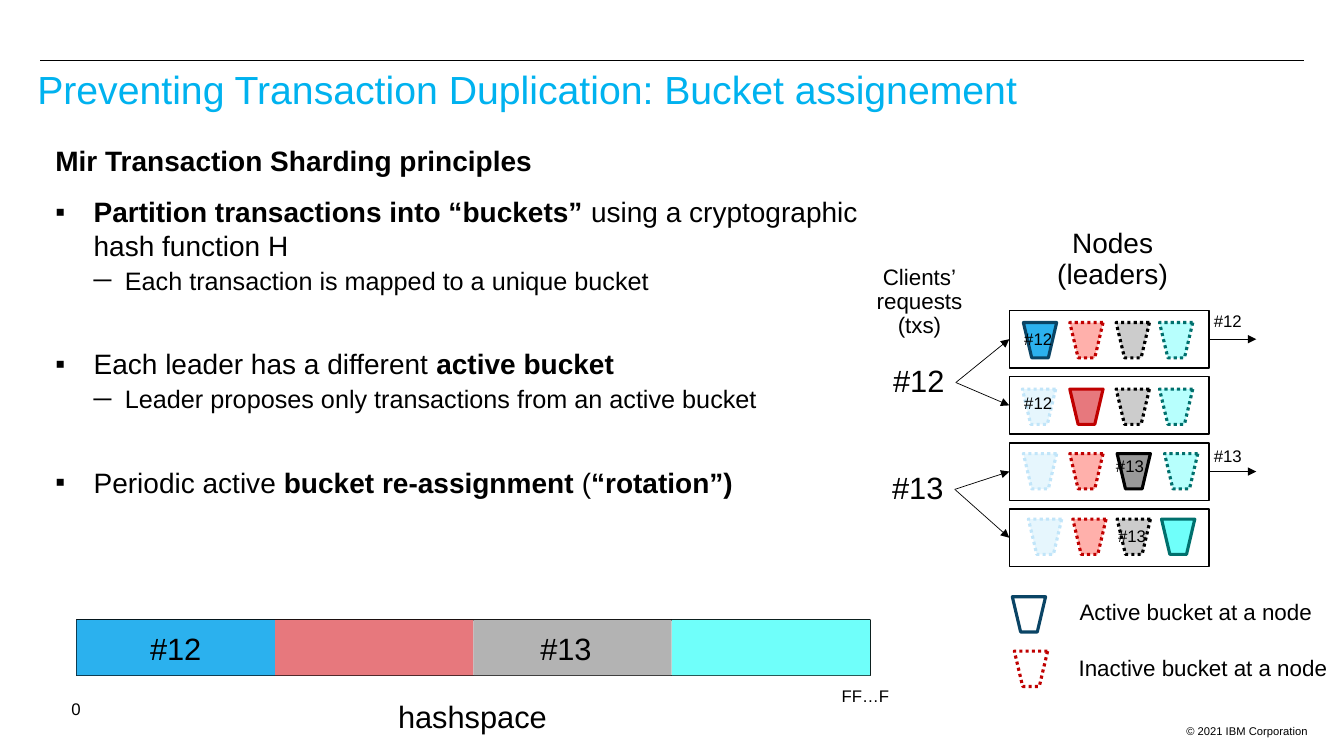
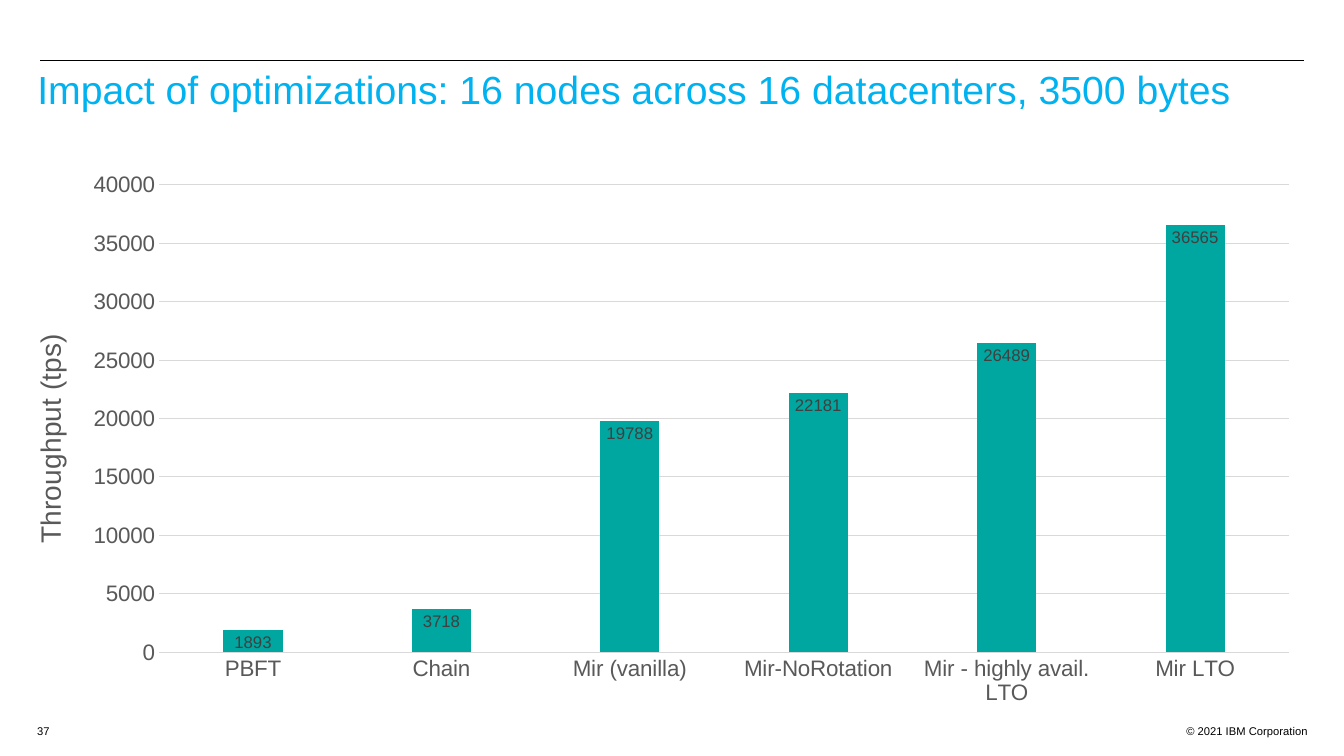
"""Build two slides on transaction sharding and throughput."""
import dataclasses
import typing

import lxml.etree
import pptx
import pptx.chart.data
import pptx.dml.color
import pptx.enum.chart
import pptx.enum.dml
import pptx.enum.shapes
import pptx.enum.text
import pptx.oxml.ns
import pptx.slide
import pptx.util

Inches = pptx.util.Inches
Pt = pptx.util.Pt
qn = pptx.oxml.ns.qn
ALIGN = pptx.enum.text.PP_ALIGN
SHAPE = pptx.enum.shapes.MSO_SHAPE

FONT = "Arial"
BLACK = "000000"
WHITE = "FFFFFF"
TITLE_BLUE = "00B2EF"
NAVY = "0A4465"
RED = "C00000"
AXIS_GREY = "595959"
GRID_GREY = "D9D9D9"
BAR_TEAL = "00A6A0"
LABEL_GREY = "404040"

LEFT_TOP, RIGHT_SIDE, LEFT_SIDE = 0.27, 3, 1
ROW_LEFT, ROW_TOP, ROW_WIDTH, ROW_HEIGHT = 10.01, 3.08, 1.98, 0.57
ROW_PITCH = 1.97 / 3
BUCKET_WIDTH, BUCKET_HEIGHT = 0.33, 0.35
HASH_LEFT, HASH_TOP, HASH_WIDTH, HASH_HEIGHT = 0.76, 6.15, 7.87, 0.55


@dataclasses.dataclass(frozen=True)
class Label:
    """A short text at a place on the slide."""

    text: str
    left: float
    top: float
    width: float
    height: float
    size: float
    align: ALIGN = ALIGN.LEFT


@dataclasses.dataclass(frozen=True)
class Point:
    """A paragraph of (text, bold) runs; level 0 has no bullet."""

    runs: tuple[tuple[str, bool], ...]
    level: int = 0
    before: float = 0


@dataclasses.dataclass(frozen=True)
class Level:
    """Size, indents and bullet of an outline level."""

    size: float
    margin: float = 0
    hanging: float = 0
    bullet: str = ""


@dataclasses.dataclass(frozen=True)
class BucketStyle:
    """Colours of a bucket in its two states."""

    active: str
    inactive: str
    active_line: str
    inactive_line: str


@dataclasses.dataclass(frozen=True)
class Node:
    """A leader's bucket places and its active bucket."""

    lefts: tuple[float, ...]
    top: float
    active: int


LEVELS = (Level(20), Level(20, 0.38, 0.38, "▪"), Level(18, 0.69, 0.31, "─"))
POINTS = (
    Point((("Mir Transaction Sharding principles", True),)),
    Point((("Partition transactions into “buckets” ", True),
           ("using a cryptographic hash function H", False)), 1, 11),
    Point((("Each transaction is mapped to a unique bucket", False),), 2),
    Point((("Each leader has a different ", False), ("active bucket", True)), 1, 35),
    Point((("Leader proposes only transactions from an active bucket", False),), 2),
    Point((("Periodic active ", False), ("bucket re-assignment ", True),
           ("(", False), ("“rotation”)", True)), 1, 35),
)
BUCKET_STYLES = (
    BucketStyle("2CB1EE", "E6F6FD", NAVY, "C1E5F9"),
    BucketStyle("E7787D", "FFB0AB", RED, RED),
    BucketStyle("999999", "CCCCCC", BLACK, BLACK),
    BucketStyle("6FFFFA", "B7FFFD", "00706D", "00706D"),
)
NODES = (
    Node((10.15, 10.61, 11.07, 11.5), 3.2, 0),
    Node((10.14, 10.61, 11.07, 11.5), 3.86, 1),
    Node((10.15, 10.61, 11.08, 11.55), 4.5, 2),
    Node((10.2, 10.64, 11.08, 11.52), 5.15, 3),
)
HASH_COLOURS = ("2BB1EE", "E7787D", "B3B3B3", "6FFFFA")
REQUESTS = (
    Label("#12", 8.76, 3.58, 0.72, 0.43, 22),
    Label("#13", 8.75, 4.64, 0.72, 0.43, 22),
)
LABELS = (
    Label("0", 0.61, 6.9, 0.29, 0.28, 12),
    Label("FF…F", 8.25, 6.78, 0.68, 0.28, 12),
    Label("#12", 1.39, 6.24, 0.72, 0.43, 22),
    Label("#13", 5.26, 6.24, 0.72, 0.43, 22),
    Label("hashspace", 3.85, 6.91, 1.7, 0.43, 22),
    Label("#12", 10.06, 3.23, 0.48, 0.28, 12),
    Label("#12", 10.06, 3.87, 0.48, 0.28, 12),
    Label("#13", 10.97, 4.49, 0.48, 0.28, 12),
    Label("#13", 10.99, 5.19, 0.48, 0.28, 12),
    Label("#13", 11.94, 4.39, 0.48, 0.28, 12),
    Label("#12", 11.94, 3.06, 0.48, 0.28, 12),
    Label("Nodes\n(leaders)", 10.38, 2.23, 1.31, 0.71, 20, ALIGN.CENTER),
    Label("Clients’\nrequests\n(txs)", 8.59, 2.59, 1.06, 0.83, 16, ALIGN.CENTER),
    Label("Active bucket at a node", 10.61, 5.92, 2.54, 0.34, 16),
    Label("Inactive bucket at a node", 10.6, 6.47, 2.7, 0.34, 16),
)
COPYRIGHT = Label("© 2021 IBM Corporation", 11.07, 7.15, 2, 0.2, 8, ALIGN.RIGHT)
PAGE_NUMBER = Label("37", LEFT_TOP, 7.15, 0.53, 0.2, 8)
THROUGHPUT = {
    "PBFT": 1893, "Chain": 3718, "Mir (vanilla)": 19788,
    "Mir-NoRotation": 22181, "Mir - highly avail. LTO": 26489, "Mir LTO": 36565,
}


def rgb(colour: str) -> pptx.dml.color.RGBColor:
    """Turn a hex string into a colour."""
    return pptx.dml.color.RGBColor.from_string(colour)


def apply(target: typing.Any, values: dict[str, typing.Any]) -> None:
    """Set each named attribute of the target."""
    for name, value in values.items():
        setattr(target, name, value)


def style_font(font: typing.Any, size: float, colour: str = BLACK, bold: bool = False) -> None:
    """Give a font its face, size, weight and colour."""
    apply(font, {"name": FONT, "size": Pt(size), "bold": bold})
    font.color.rgb = rgb(colour)


def style_line(line: typing.Any, colour: str, width: float) -> None:
    """Give a line its colour and width."""
    line.color.rgb = rgb(colour)
    line.width = Pt(width)


def add_label(slide: pptx.slide.Slide, label: Label) -> typing.Any:
    """Draw a label that does not wrap."""
    box = slide.shapes.add_textbox(*map(Inches, (label.left, label.top, label.width, label.height)))
    box.text_frame.word_wrap = False
    box.text_frame.text = label.text
    for paragraph in box.text_frame.paragraphs:
        apply(paragraph, {"alignment": label.align, "line_spacing": 0.9})
        style_font(paragraph.runs[0].font, label.size)
    return box


def add_line(slide: pptx.slide.Slide, start: tuple[float, float], end: tuple[float, float],
             width: float, arrow: bool = False) -> typing.Any:
    """Draw a straight black line, with an arrowhead if asked."""
    line = slide.shapes.add_connector(
        pptx.enum.shapes.MSO_CONNECTOR.STRAIGHT, *map(Inches, start + end))
    style_line(line.line, BLACK, width)
    if arrow:
        lxml.etree.SubElement(line.line._get_or_add_ln(), qn("a:tailEnd"), type="triangle")
    lxml.etree.SubElement(line._element.spPr, qn("a:effectLst"))
    return line


def add_block(slide: pptx.slide.Slide, kind: SHAPE, place: tuple[float, ...],
              fill: str = "", outline: str = "", width: float = 1) -> typing.Any:
    """Draw a preset shape; an empty colour means none."""
    block = slide.shapes.add_shape(kind, *map(Inches, place))
    block.shadow.inherit = False
    if fill:
        block.fill.solid()
        block.fill.fore_color.rgb = rgb(fill)
    else:
        block.fill.background()
    if outline:
        style_line(block.line, outline, width)
    else:
        block.line.fill.background()
    return block


def add_bucket(slide: pptx.slide.Slide, left: float, top: float, fill: str,
               outline: str, active: bool) -> None:
    """Draw a bucket, dotted when it is inactive."""
    bucket = add_block(slide, SHAPE.TRAPEZOID, (left, top, BUCKET_WIDTH, BUCKET_HEIGHT),
                       fill, outline, 2.25)
    bucket.rotation = 180
    if not active:
        bucket.line.dash_style = pptx.enum.dml.MSO_LINE.ROUND_DOT


def start_slide(deck: typing.Any, heading: str) -> pptx.slide.Slide:
    """Add a slide with rule, title and copyright line."""
    slide = deck.slides.add_slide(deck.slide_layouts[5])
    title = slide.shapes.title
    apply(title, {"left": Inches(LEFT_TOP), "top": Inches(0.65),
                  "width": Inches(12.67), "height": Inches(0.8)})
    title.text_frame.text = heading
    title.text_frame.vertical_anchor = pptx.enum.text.MSO_ANCHOR.TOP
    paragraph = title.text_frame.paragraphs[0]
    apply(paragraph, {"alignment": ALIGN.LEFT, "line_spacing": 0.9})
    style_font(paragraph.runs[0].font, 28, TITLE_BLUE)
    add_line(slide, (0.4, 0.6), (12.93, 0.6), 0.75)
    add_label(slide, COPYRIGHT)
    return slide


def add_outline(slide: pptx.slide.Slide) -> None:
    """Write the sharding principles."""
    frame = slide.shapes.add_textbox(*map(Inches, (0.45, 1.37, 8.21, 4.5))).text_frame
    frame.word_wrap = True
    for index, point in enumerate(POINTS):
        paragraph = frame.add_paragraph() if index else frame.paragraphs[0]
        level = LEVELS[point.level]
        if level.bullet:
            properties = paragraph._p.get_or_add_pPr()
            properties.set("marL", str(Inches(level.margin)))
            properties.set("indent", str(-Inches(level.hanging)))
            colour = lxml.etree.SubElement(properties, qn("a:buClr"))
            lxml.etree.SubElement(colour, qn("a:srgbClr"), val=BLACK)
            lxml.etree.SubElement(properties, qn("a:buFont"), typeface=FONT)
            lxml.etree.SubElement(properties, qn("a:buChar"), char=level.bullet)
        apply(paragraph, {"space_before": Pt(point.before), "space_after": Pt(2)})
        for text, bold in point.runs:
            run = paragraph.add_run()
            run.text = text
            style_font(run.font, level.size, bold=bold)


def build_buckets(deck: typing.Any) -> None:
    """Build the bucket assignment slide."""
    slide = start_slide(deck, "Preventing Transaction Duplication: Bucket assignement")
    add_outline(slide)
    add_block(slide, SHAPE.RECTANGLE, (HASH_LEFT, HASH_TOP, HASH_WIDTH, HASH_HEIGHT), WHITE, BLACK)
    share = HASH_WIDTH / len(HASH_COLOURS)
    for index, colour in enumerate(HASH_COLOURS):
        add_block(slide, SHAPE.RECTANGLE,
                  (HASH_LEFT + index * share, HASH_TOP, share, HASH_HEIGHT), colour)
    rows = []
    for index, node in enumerate(NODES):
        place = (ROW_LEFT, ROW_TOP + index * ROW_PITCH, ROW_WIDTH, ROW_HEIGHT)
        rows.append(add_block(slide, SHAPE.RECTANGLE, place, WHITE, BLACK))
        for number, (left, style) in enumerate(zip(node.lefts, BUCKET_STYLES)):
            active = number == node.active
            fill, outline = ((style.active, style.active_line) if active
                             else (style.inactive, style.inactive_line))
            add_bucket(slide, left, node.top, fill, outline, active)
    for index, request in enumerate(REQUESTS):
        sender = add_label(slide, request)
        receivers = rows[2 * index:2 * index + 2]
        for receiver in receivers:
            arrow = add_line(slide, (9.47, 3.8), (ROW_LEFT, 3.37), 0.5, True)
            arrow.begin_connect(sender, RIGHT_SIDE)
            arrow.end_connect(receiver, LEFT_SIDE)
        middle = ROW_TOP + 2 * index * ROW_PITCH + ROW_HEIGHT / 2
        proposal = add_line(slide, (ROW_LEFT + ROW_WIDTH, middle), (12.46, middle), 0.5, True)
        proposal.begin_connect(receivers[0], RIGHT_SIDE)
    add_bucket(slide, 10.04, 5.92, "", NAVY, True)
    add_bucket(slide, 10.06, 6.46, "", RED, False)
    for label in LABELS:
        add_label(slide, label)


def build_throughput(deck: typing.Any) -> None:
    """Build the throughput chart slide."""
    slide = start_slide(deck, "Impact of optimizations: 16 nodes across 16 datacenters, 3500 bytes")
    figures = pptx.chart.data.CategoryChartData()
    figures.categories = list(THROUGHPUT)
    figures.add_series("Series 1", list(THROUGHPUT.values()))
    chart = slide.shapes.add_chart(
        pptx.enum.chart.XL_CHART_TYPE.COLUMN_CLUSTERED,
        *map(Inches, (LEFT_TOP, 1.6, 12.67, 5.6)), figures).chart
    apply(chart, {"has_title": False, "has_legend": False})
    style_font(chart.font, 10)
    for axis in (chart.category_axis, chart.value_axis):
        apply(axis, {"major_tick_mark": pptx.enum.chart.XL_TICK_MARK.NONE,
                     "minor_tick_mark": pptx.enum.chart.XL_TICK_MARK.NONE})
        style_font(axis.tick_labels.font, 16, AXIS_GREY)
    style_line(chart.category_axis.format.line, GRID_GREY, 0.75)
    scale = chart.value_axis
    apply(scale, {"minimum_scale": 0, "maximum_scale": 40000, "major_unit": 5000})
    scale.format.line.fill.background()
    style_line(scale.major_gridlines.format.line, GRID_GREY, 0.75)
    scale.axis_title.text_frame.text = "Throughput (tps)"
    style_font(scale.axis_title.text_frame.paragraphs[0].runs[0].font, 20, AXIS_GREY)
    plot = chart.plots[0]
    apply(plot, {"gap_width": 219, "overlap": -27, "vary_by_categories": False,
                 "has_data_labels": True})
    bars = plot.series[0].format.fill
    bars.solid()
    bars.fore_color.rgb = rgb(BAR_TEAL)
    apply(plot.data_labels, {"show_value": True,
                             "position": pptx.enum.chart.XL_LABEL_POSITION.INSIDE_END})
    style_font(plot.data_labels.font, 12, LABEL_GREY)
    area = chart._chartSpace.chart.plotArea
    for old in area.findall(qn("c:layout")):
        area.remove(old)
    layout = lxml.etree.Element(qn("c:layout"))
    area.insert(0, layout)
    manual = lxml.etree.SubElement(layout, qn("c:manualLayout"))
    for tag, value in {"layoutTarget": "inner", "xMode": "edge", "yMode": "edge",
                       "x": "0.103", "y": "0.042", "w": "0.885", "h": "0.828"}.items():
        lxml.etree.SubElement(manual, qn(f"c:{tag}"), val=value)
    add_label(slide, PAGE_NUMBER)


def main() -> None:
    """Build and save the deck."""
    deck = pptx.Presentation()
    apply(deck, {"slide_width": Inches(13.33), "slide_height": Inches(7.5)})
    build_buckets(deck)
    build_throughput(deck)
    deck.save("out.pptx")


if __name__ == "__main__":
    main()
